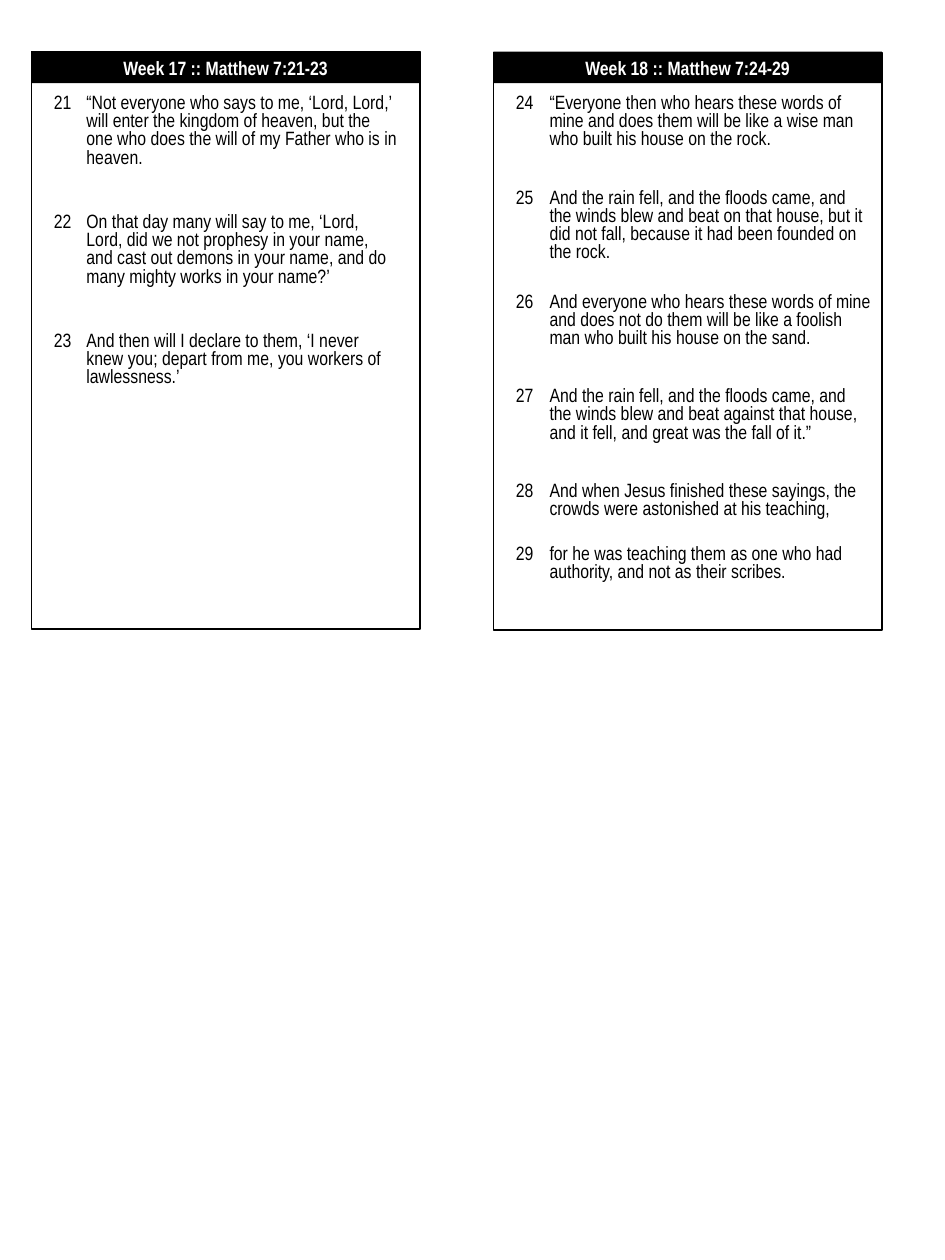
import pptx
import pptx.util
import pptx.dml.color
import pptx.enum.shapes
import pptx.enum.text
from dataclasses import dataclass

Pt = pptx.util.Pt
RGBColor = pptx.dml.color.RGBColor


@dataclass(frozen=True)
class Theme:
    font: str = "Arial Narrow"
    size: float = 11
    ink: RGBColor = RGBColor(0, 0, 0)
    paper: RGBColor = RGBColor(255, 255, 255)
    line: float = 0.75


THEME = Theme()
CARD_WIDTH, CARD_HEIGHT = 222, 330
HEADER_TOP, HEADER_HEIGHT = 29.5, 18
TABLE_TOP = 54

# Each week: card place, table columns, and (row height, verse number, verse)
WEEKS = [
    {
        "title": "Week 17 :: Matthew 7:21-23",
        "left": 18, "frame_top": 29.5, "table_left": 30, "columns": (18.7, 180),
        "verses": [
            (68, "21", "“Not everyone who says to me, ‘Lord, Lord,’ will enter the kingdom of "
                       "heaven, but the one who does the will of my Father who is in heaven."),
            (68, "22", "On that day many will say to me, ‘Lord, Lord, did we not prophesy in your "
                       "name, and cast out demons in your name, and do many mighty works in your name?’"),
            (68, "23", "And then will I declare to them, ‘I never knew you; depart from me, "
                       "you workers of lawlessness.’"),
        ],
    },
    {
        "title": "Week 18 :: Matthew 7:24-29",
        "left": 282, "frame_top": 30, "table_left": 294, "columns": (19.3, 186),
        "verses": [
            (54.25, "24", "“Everyone then who hears these words of mine and does them will be like "
                          "a wise man who built his house on the rock."),
            (59, "25", "And the rain fell, and the floods came, and the winds blew and beat on that "
                       "house, but it did not fall, because it had been founded on the rock."),
            (54.25, "26", "And everyone who hears these words of mine and does not do them will be "
                          "like a foolish man who built his house on the sand."),
            (54.25, "27", "And the rain fell, and the floods came, and the winds blew and beat "
                          "against that house, and it fell, and great was the fall of it.”"),
            (36, "28", "And when Jesus finished these sayings, the crowds were astonished at his teaching,"),
            (36, "29", "for he was teaching them as one who had authority, and not as their scribes."),
        ],
    },
]


def add_run(paragraph, text, color, bold=False):
    run = paragraph.add_run()
    run.text = text
    run.font.name = THEME.font
    run.font.size = Pt(THEME.size)
    run.font.bold = bold
    run.font.color.rgb = color


def add_rectangle(slide, left, top, height):
    shape = slide.shapes.add_shape(pptx.enum.shapes.MSO_SHAPE.RECTANGLE,
                                   Pt(left), Pt(top), Pt(CARD_WIDTH), Pt(height))
    shape.shadow.inherit = False
    return shape


def add_frame(slide, left, top):
    shape = add_rectangle(slide, left, top, CARD_HEIGHT)
    shape.fill.background()
    shape.line.color.rgb = THEME.ink
    shape.line.width = Pt(THEME.line)


def add_header(slide, left, title):
    shape = add_rectangle(slide, left, HEADER_TOP, HEADER_HEIGHT)
    shape.fill.solid()
    shape.fill.fore_color.rgb = THEME.ink
    shape.line.fill.background()
    shape.text_frame.vertical_anchor = pptx.enum.text.MSO_ANCHOR.MIDDLE
    paragraph = shape.text_frame.paragraphs[0]
    paragraph.alignment = pptx.enum.text.PP_ALIGN.CENTER
    add_run(paragraph, title, THEME.paper, bold=True)


def fill_cell(cell, text):
    cell.fill.background()
    cell.margin_left = cell.margin_right = cell.margin_top = Pt(0.75)
    cell.margin_bottom = Pt(0)
    add_run(cell.text_frame.paragraphs[0], text, THEME.ink)


def add_verses(slide, left, columns, verses):
    height = sum(verse[0] for verse in verses)
    table = slide.shapes.add_table(len(verses), len(columns), Pt(left), Pt(TABLE_TOP),
                                   Pt(sum(columns)), Pt(height)).table
    table.first_row = False
    table.horz_banding = False
    for column, width in zip(table.columns, columns):
        column.width = Pt(width)
    for row, (row_height, *texts) in zip(table.rows, verses):
        row.height = Pt(row_height)
        for cell, text in zip(row.cells, texts):
            fill_cell(cell, text)


def main():
    presentation = pptx.Presentation()
    presentation.slide_width, presentation.slide_height = Pt(540), Pt(720)
    slide = presentation.slides.add_slide(presentation.slide_layouts[6])

    # Cards: outline and title bar
    for week in WEEKS:
        add_frame(slide, week["left"], week["frame_top"])
        add_header(slide, week["left"], week["title"])

    # Verse tables
    for week in WEEKS:
        add_verses(slide, week["table_left"], week["columns"], week["verses"])

    presentation.save("out.pptx")


if __name__ == "__main__":
    main()
